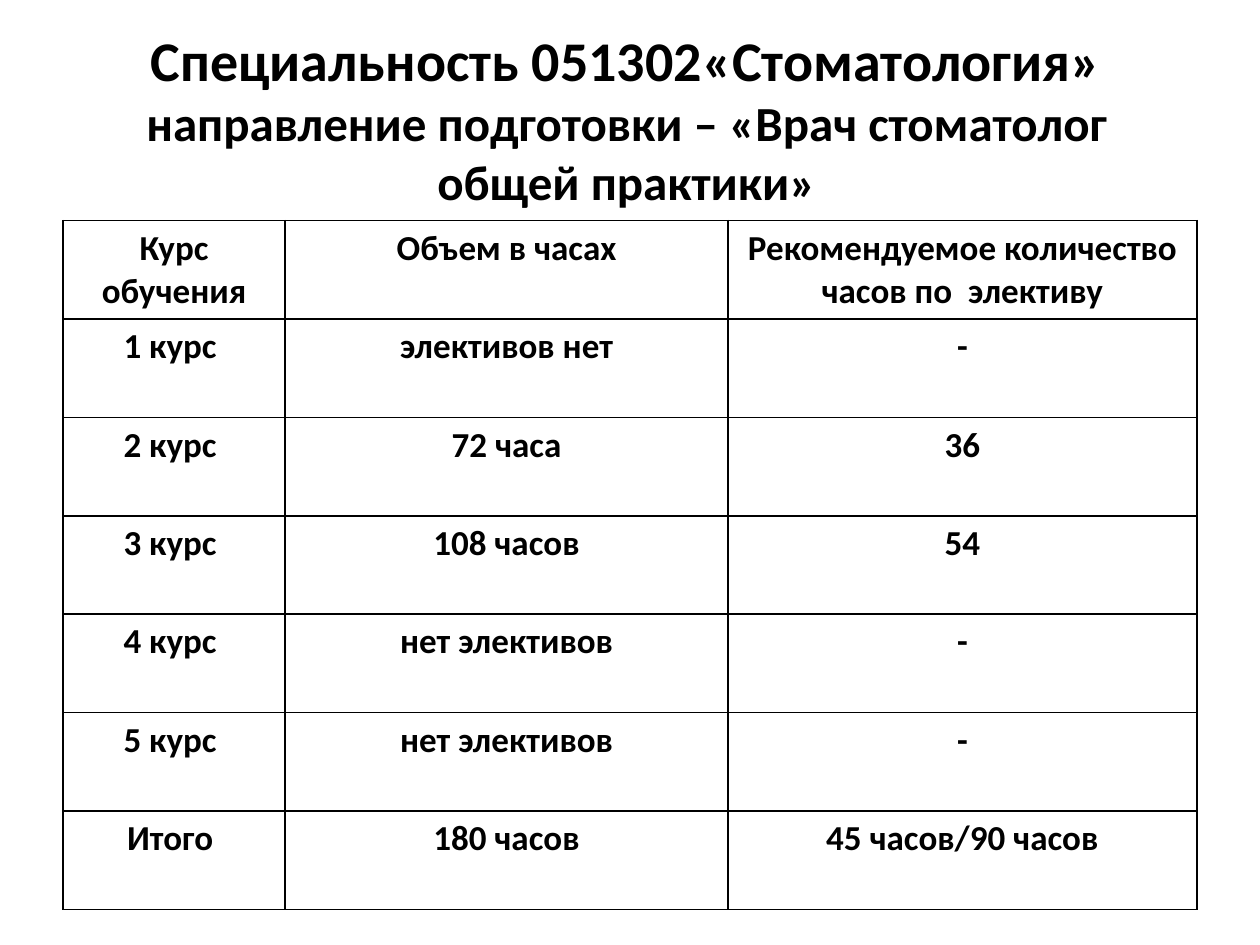
from dataclasses import dataclass

from lxml import etree
from pptx import Presentation
from pptx.dml.color import RGBColor
from pptx.enum import text
from pptx.oxml import ns
from pptx.util import Pt


@dataclass(frozen=True)
class Theme:
    font: str = "Calibri"
    ink: str = "000000"
    paper: str = "FFFFFF"
    title: int = 32
    subtitle: int = 28
    cell: int = 20
    border: int = 1


THEME = Theme()
COLUMN_WIDTHS = (127, 253, 268)
ROW_HEIGHT = 56.25
HOURS = (
    ("Курс обучения", "Объем в часах", "Рекомендуемое количество часов по  элективу"),
    ("1 курс ", "элективов нет", "-"),
    ("2 курс ", "72 часа", "36"),
    ("3 курс ", "108 часов", "54"),
    ("4 курс ", "нет элективов", "-"),
    ("5 курс ", "нет элективов", "-"),
    ("Итого ", "180 часов", "45 часов/90 часов"),
)


def format_paragraph(p, *sizes):
    """Centre the paragraph and give each run its size in turn."""
    p.alignment = text.PP_ALIGN.CENTER
    for r, size in zip(p.runs, sizes):
        r.font.name = THEME.font
        r.font.size = Pt(size)
        r.font.bold = True
        r.font.color.rgb = RGBColor.from_string(THEME.ink)


def add_title(s):
    sp = s.shapes.title
    sp.left, sp.top, sp.width, sp.height = Pt(34), Pt(22.5), Pt(648), Pt(90)
    tf = sp.text_frame
    tf.text = "Специальность 051302«Cтоматология»\vнаправление подготовки – «Врач стоматолог общей практики»"
    tf.word_wrap = True
    tf.auto_size = text.MSO_AUTO_SIZE.NONE
    tf.vertical_anchor = text.MSO_ANCHOR.MIDDLE
    format_paragraph(tf.paragraphs[0], THEME.title, THEME.subtitle)


def set_borders(cell):
    tc_pr = cell._tc.get_or_add_tcPr()
    for i, side in enumerate(("a:lnL", "a:lnR", "a:lnT", "a:lnB")):
        line = etree.Element(ns.qn(side), w=str(Pt(THEME.border)))
        fill = etree.SubElement(line, ns.qn("a:solidFill"))
        etree.SubElement(fill, ns.qn("a:srgbClr"), val=THEME.ink)
        tc_pr.insert(i, line)


def fill_cell(cell, value):
    cell.text_frame.text = value
    format_paragraph(cell.text_frame.paragraphs[0], THEME.cell)
    cell.fill.solid()
    cell.fill.fore_color.rgb = RGBColor.from_string(THEME.paper)
    set_borders(cell)


def add_hours_table(s):
    frame = s.shapes.add_table(
        len(HOURS), len(COLUMN_WIDTHS), Pt(36), Pt(126),
        Pt(sum(COLUMN_WIDTHS)), Pt(ROW_HEIGHT * len(HOURS)))
    table = frame.table
    table.horz_banding = False
    for column, width in zip(table.columns, COLUMN_WIDTHS):
        column.width = Pt(width)
    for row, values in zip(table.rows, HOURS):
        row.height = Pt(ROW_HEIGHT)
        for cell, value in zip(row.cells, values):
            fill_cell(cell, value)


def main():
    prs = Presentation()
    prs.slide_width, prs.slide_height = Pt(720), Pt(540)
    s = prs.slides.add_slide(prs.slide_layouts.get_by_name("Title Only"))
    add_title(s)
    add_hours_table(s)
    prs.save("out.pptx")


if __name__ == "__main__":
    main()
